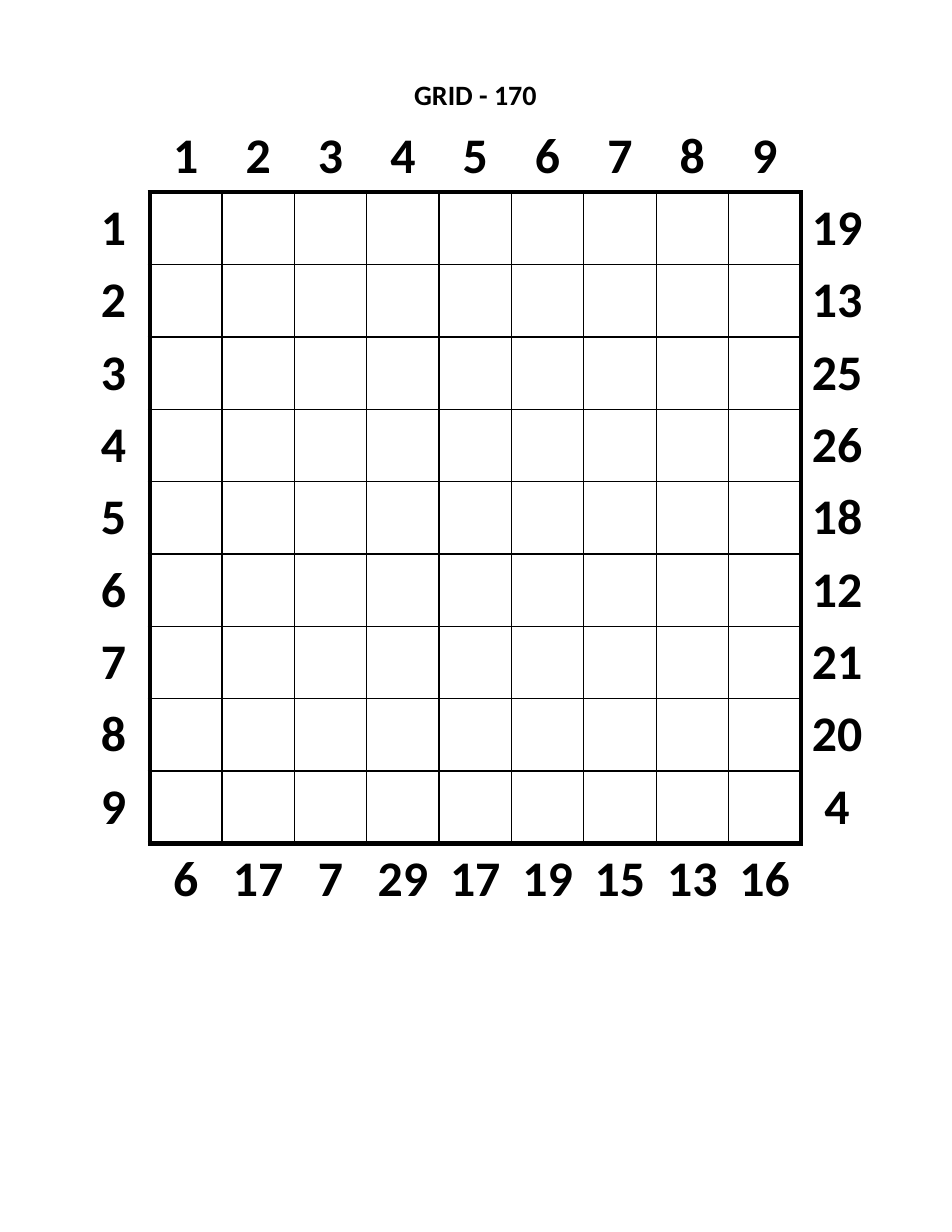
from lxml import etree
from pptx import Presentation
from pptx.dml.color import RGBColor
from pptx.enum.text import MSO_ANCHOR as Anchor, MSO_AUTO_SIZE as AutoSize, PP_ALIGN as Align
from pptx.oxml.ns import qn
from pptx.util import Inches, Pt

COLORS = {"ink": "000000", "paper": "FFFFFF"}
FONT = "Calibri"
LEFT, WIDTH = 0.69, 7.11
TITLE_TOP, TITLE_HEIGHT = 0.69, 0.3
TABLE_TOP = 1.07
SIZE = 9
COUNT = SIZE + 2
THIN, THICK = 1, 3
ROW_TOTALS = [19, 13, 25, 26, 18, 12, 21, 20, 4]
COLUMN_TOTALS = [6, 17, 7, 29, 17, 19, 15, 13, 16]
SIDES = {"lnL": (0, -1), "lnR": (0, 1), "lnT": (-1, 0), "lnB": (1, 0)}


def write_text(frame, text, size, bold=True, color="ink", align=Align.CENTER):
    para = frame.paragraphs[0]
    para.alignment = align
    span = para.add_run()
    span.text = text
    span.font.name = FONT
    span.font.size = Pt(size)
    span.font.bold = bold
    span.font.color.rgb = RGBColor.from_string(COLORS[color])


def add_title(page, text):
    box = page.shapes.add_textbox(
        Inches(LEFT), Inches(TITLE_TOP), Inches(WIDTH), Inches(TITLE_HEIGHT))
    frame = box.text_frame
    frame.word_wrap = True
    frame.auto_size = AutoSize.SHAPE_TO_FIT_TEXT
    frame.margin_left = frame.margin_right = frame.margin_top = frame.margin_bottom = 0
    write_text(frame, text, size=18)


def in_grid(row, column):
    return 1 <= row <= SIZE and 1 <= column <= SIZE


def border_width(row, column, step):
    """Thin between grid squares, thick around the grid, zero elsewhere."""
    here = in_grid(row, column)
    there = in_grid(row + step[0], column + step[1])
    if here and there:
        return THIN
    return THICK if here or there else 0


def set_border(cell, side, width):
    properties = cell._tc.get_or_add_tcPr()
    line = etree.SubElement(properties, qn(f"a:{side}"), w=str(int(Pt(width))))
    if width:
        fill = etree.SubElement(line, qn("a:solidFill"))
        etree.SubElement(fill, qn("a:srgbClr"), val=COLORS["ink"])
    else:
        etree.SubElement(line, qn("a:noFill"))


def label_at(row, column):
    """Numbers run along the top and left, totals along the bottom and right."""
    if 1 <= column <= SIZE:
        return {0: str(column), SIZE + 1: str(COLUMN_TOTALS[column - 1])}.get(row, "")
    if 1 <= row <= SIZE:
        return str(row) if column == 0 else str(ROW_TOTALS[row - 1])
    return ""


def format_cell(cell, row, column):
    for side, step in SIDES.items():
        set_border(cell, side, border_width(row, column, step))
    cell.fill.solid()
    cell.fill.fore_color.rgb = RGBColor.from_string(COLORS["paper"])
    cell.margin_left = cell.margin_right = cell.margin_top = cell.margin_bottom = 0
    cell.vertical_anchor = Anchor.MIDDLE
    label = label_at(row, column)
    if label:
        write_text(cell.text_frame, label, size=32)


def add_grid(page):
    table = page.shapes.add_table(
        COUNT, COUNT, Inches(LEFT), Inches(TABLE_TOP), Inches(WIDTH), Inches(WIDTH)).table
    table.first_row = table.horz_banding = False
    for index in range(COUNT):
        table.columns[index].width = table.rows[index].height = Inches(WIDTH / COUNT)
    for row in range(COUNT):
        for column in range(COUNT):
            format_cell(table.cell(row, column), row, column)


def main():
    deck = Presentation()
    deck.slide_width, deck.slide_height = Inches(8.5), Inches(11)
    page = deck.slides.add_slide(deck.slide_layouts[6])
    add_title(page, "GRID - 170")
    add_grid(page)
    deck.save("out.pptx")


if __name__ == "__main__":
    main()
